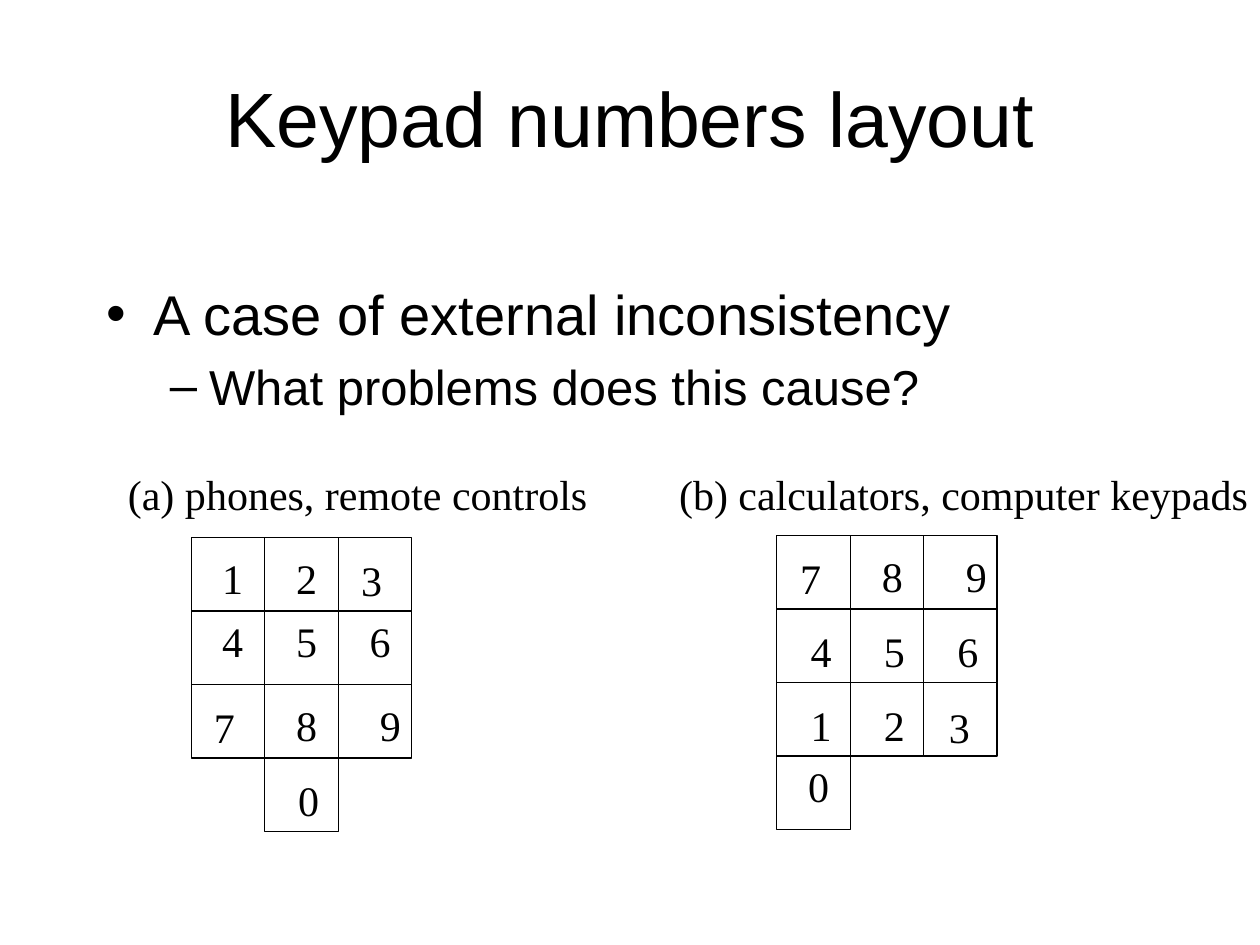
from dataclasses import dataclass

from pptx import Presentation
from pptx.dml.color import RGBColor
from pptx.enum.shapes import MSO_SHAPE
from pptx.enum.text import MSO_ANCHOR, MSO_AUTO_SIZE, PP_ALIGN
from pptx.slide import Slide
from pptx.text.text import _Paragraph as Paragraph
from pptx.util import Cm, Pt

RECTANGLE = MSO_SHAPE.RECTANGLE
MIDDLE, TOP = MSO_ANCHOR.MIDDLE, MSO_ANCHOR.TOP
FIXED, GROW = MSO_AUTO_SIZE.NONE, MSO_AUTO_SIZE.SHAPE_TO_FIT_TEXT
LEFT, CENTER = PP_ALIGN.LEFT, PP_ALIGN.CENTER
TITLE_AND_CONTENT = 1


@dataclass(frozen=True)
class Theme:
    ink: RGBColor = RGBColor(0, 0, 0)
    heading_font: str = "Arial"
    label_font: str = "Times New Roman"
    title_size: int = 44
    bullet_size: int = 32
    sub_bullet_size: int = 28
    label_size: int = 24
    line_width: float = 0.75


THEME = Theme()
CELL = 1.48  # key side, cm
LABEL_HEIGHT = 1.27
DIGIT_WIDTH = 0.94


@dataclass(frozen=True)
class Key:
    """A key in the grid, with the place of its digit in cm."""
    digit: str
    column: int
    row: int
    left: float
    top: float


@dataclass(frozen=True)
class Keypad:
    """A captioned grid of keys; lengths in cm."""
    caption: str
    caption_left: float
    caption_width: float
    left: float
    top: float
    keys: tuple[Key, ...]


@dataclass(frozen=True)
class Bullet:
    text: str
    level: int
    size: int
    margin: float
    indent: float


BULLETS = (
    Bullet("A case of external inconsistency", 0, THEME.bullet_size, 0.95, -0.95),
    Bullet("What problems does this cause?", 1, THEME.sub_bullet_size, 2.06, -0.79),
)

KEYPADS = (
    Keypad("(a) phones, remote controls", 2.33, 9.78, 3.86, 10.84, (
        Key("1", 0, 0, 4.23, 11.01),
        Key("2", 1, 0, 5.72, 11.01),
        Key("3", 2, 0, 7.03, 11.05),
        Key("4", 0, 1, 4.23, 12.28),
        Key("5", 1, 1, 5.72, 12.28),
        Key("6", 2, 1, 7.2, 12.28),
        Key("7", 0, 2, 4.06, 14.01),
        Key("8", 1, 2, 5.72, 13.97),
        Key("9", 2, 2, 7.41, 13.97),
        Key("0", 1, 3, 5.76, 15.49),
    )),
    Keypad("(b) calculators, computer keypads", 13.44, 11.99, 15.66, 10.8, (
        Key("7", 0, 0, 15.88, 11.01),
        Key("8", 1, 0, 17.53, 10.97),
        Key("9", 2, 0, 19.22, 10.97),
        Key("4", 0, 1, 16.09, 12.49),
        Key("5", 1, 1, 17.57, 12.49),
        Key("6", 2, 1, 19.05, 12.49),
        Key("1", 0, 2, 16.09, 13.97),
        Key("2", 1, 2, 17.57, 13.97),
        Key("3", 2, 2, 18.88, 14.01),
        Key("0", 0, 3, 16.04, 15.2),
    )),
)


def write_text(paragraph: Paragraph, text: str, *, font: str, size: int,
               alignment: PP_ALIGN = LEFT) -> None:
    paragraph.alignment = alignment
    run = paragraph.add_run()
    run.text = text
    run.font.name = font
    run.font.size = Pt(size)
    run.font.color.rgb = THEME.ink


def place(shape, left: float, top: float, width: float, height: float) -> None:
    shape.left, shape.top = Cm(left), Cm(top)
    shape.width, shape.height = Cm(width), Cm(height)


def add_label(slide: Slide, text: str, left: float, top: float, width: float) -> None:
    box = slide.shapes.add_textbox(Cm(left), Cm(top), Cm(width), Cm(LABEL_HEIGHT))
    frame = box.text_frame
    frame.word_wrap = False
    frame.auto_size = GROW
    write_text(frame.paragraphs[0], text, font=THEME.label_font, size=THEME.label_size)


def add_cell(slide: Slide, left: float, top: float) -> None:
    cell = slide.shapes.add_shape(RECTANGLE, Cm(left), Cm(top), Cm(CELL), Cm(CELL))
    cell.shadow.inherit = False
    cell.fill.background()
    cell.line.color.rgb = THEME.ink
    cell.line.width = Pt(THEME.line_width)


def add_keypad(slide: Slide, keypad: Keypad) -> None:
    for key in keypad.keys:
        add_cell(slide, keypad.left + key.column * CELL, keypad.top + key.row * CELL)
    for key in keypad.keys:
        add_label(slide, key.digit, key.left, key.top, DIGIT_WIDTH)
    add_label(slide, keypad.caption, keypad.caption_left, 9.32, keypad.caption_width)


def fill_title(slide: Slide) -> None:
    title = slide.shapes.title
    place(title, 1.27, 0.76, 22.86, 3.18)
    title.text_frame.vertical_anchor = MIDDLE
    title.text_frame.auto_size = FIXED
    write_text(title.text_frame.paragraphs[0], "Keypad numbers layout",
               font=THEME.heading_font, size=THEME.title_size, alignment=CENTER)


def fill_body(slide: Slide) -> None:
    body = slide.placeholders[1]
    place(body, 1.9, 5.5, 22.23, 11.43)
    frame = body.text_frame
    frame.vertical_anchor = TOP
    frame.auto_size = FIXED
    for index, bullet in enumerate(BULLETS):
        paragraph = frame.add_paragraph() if index else frame.paragraphs[0]
        paragraph.level = bullet.level
        properties = paragraph._p.get_or_add_pPr()
        properties.set("marL", str(Cm(bullet.margin)))
        properties.set("indent", str(Cm(bullet.indent)))
        write_text(paragraph, bullet.text, font=THEME.heading_font, size=bullet.size)


def main() -> None:
    presentation = Presentation()
    presentation.slide_width, presentation.slide_height = Cm(25.4), Cm(19.05)
    slide = presentation.slides.add_slide(presentation.slide_layouts[TITLE_AND_CONTENT])

    # Title and bullets
    fill_title(slide)
    fill_body(slide)

    # The two keypads
    for keypad in KEYPADS:
        add_keypad(slide, keypad)

    presentation.save("out.pptx")


if __name__ == "__main__":
    main()
